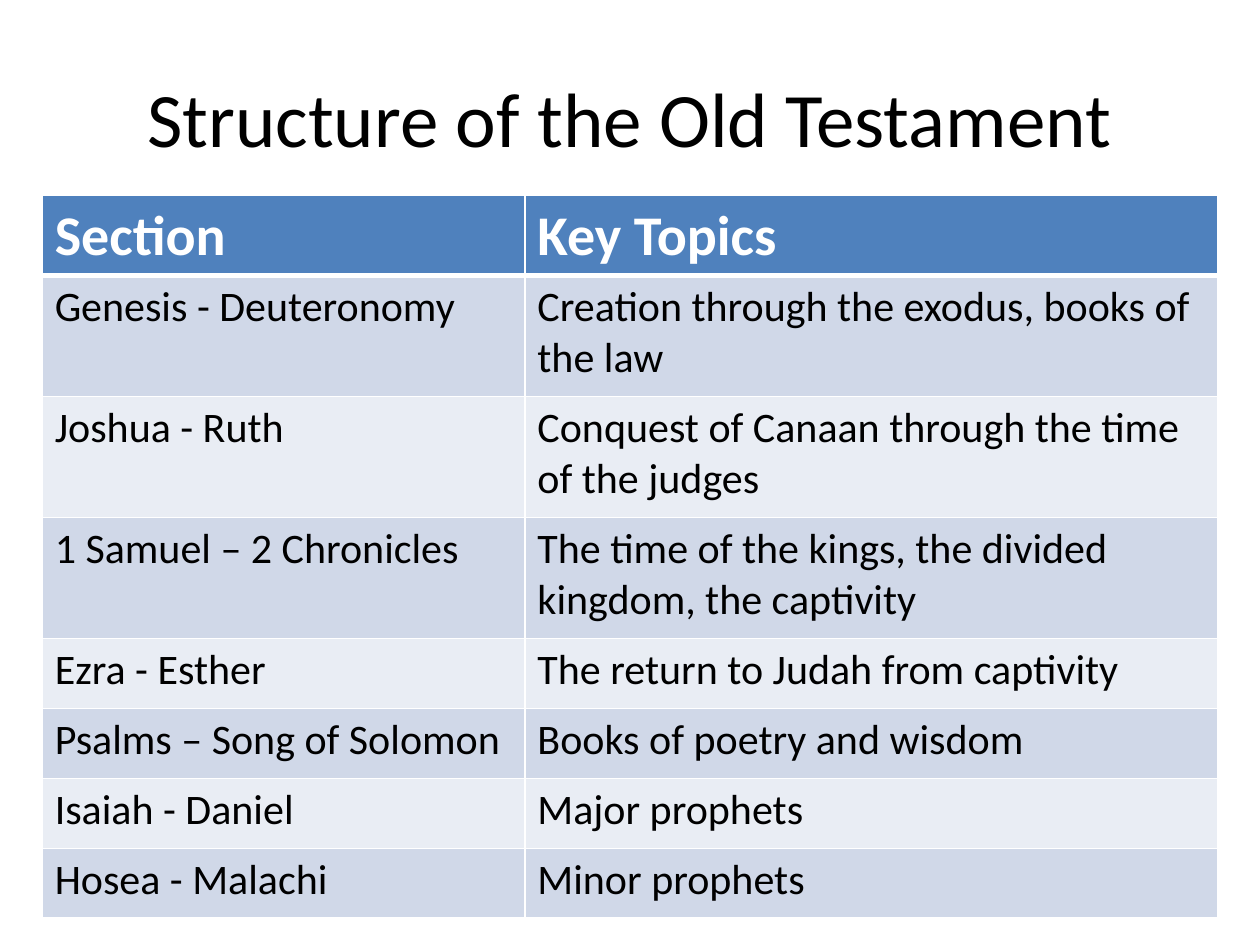
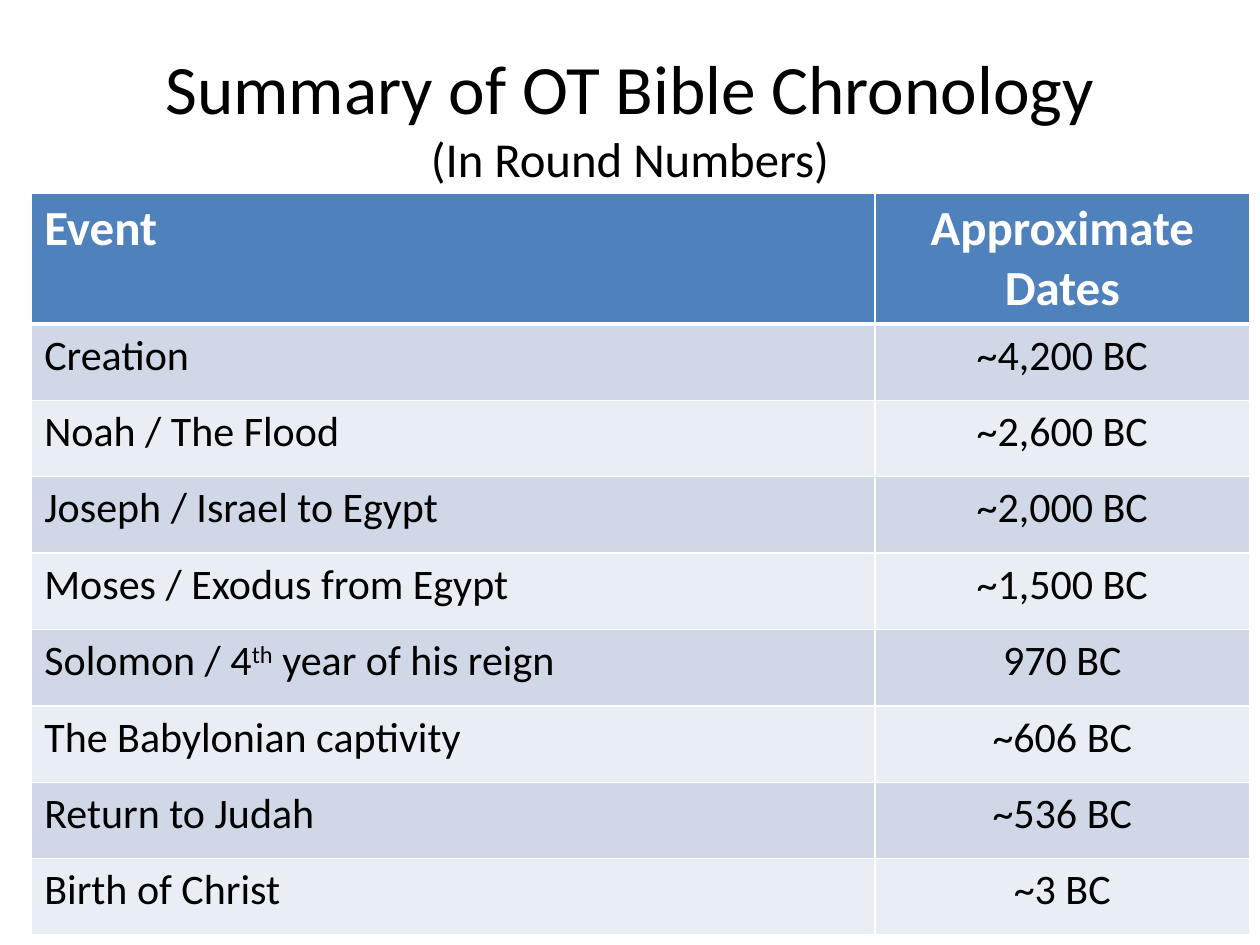
from dataclasses import dataclass

from lxml import etree
from pptx import Presentation
from pptx.dml.color import RGBColor
from pptx.enum.text import MSO_ANCHOR, PP_ALIGN
from pptx.oxml.ns import qn
from pptx.util import Cm, Pt

CENTER = PP_ALIGN.CENTER
LEFT = PP_ALIGN.LEFT
MIDDLE = MSO_ANCHOR.MIDDLE

FONT = "Calibri"
BLACK = "000000"
WHITE = "FFFFFF"
HEADER_BLUE = "4F81BD"
BAND_FILLS = ("D0D8E8", "E9EDF4")
BODY_SIZE = 24
RULE_WIDTH = 1
HEADER_RULE_WIDTH = 3
SUPERSCRIPT_MARK = "^"


@dataclass(frozen=True)
class TitleLine:
    text: str
    size: float


@dataclass(frozen=True)
class Grid:
    left: float
    top: float
    columns: tuple[float, ...]
    row_heights: tuple[float, ...]
    alignments: tuple[PP_ALIGN, ...]
    header_size: float
    rows: tuple[tuple[str, ...], ...]


@dataclass(frozen=True)
class Page:
    title: tuple[TitleLine, ...]
    grid: Grid


STRUCTURE = Page(
    title=(TitleLine("Structure of the Old Testament", 44),),
    grid=Grid(
        left=0.85,
        top=3.94,
        columns=(9.73, 13.97),
        row_heights=(1.6,) + (2.44,) * 3 + (1.41,) * 4,
        alignments=(LEFT, LEFT),
        header_size=32,
        rows=(
            ("Section", "Key Topics"),
            ("Genesis - Deuteronomy", "Creation through the exodus, books of the law"),
            ("Joshua - Ruth", "Conquest of Canaan through the time of the judges"),
            ("1 Samuel – 2 Chronicles",
             "The time of the kings, the divided kingdom, the captivity"),
            ("Ezra - Esther", "The return to Judah from captivity"),
            ("Psalms – Song of Solomon", "Books of poetry and wisdom"),
            ("Isaiah - Daniel", "Major prophets"),
            ("Hosea - Malachi", "Minor prophets"),
        ),
    ),
)

CHRONOLOGY = Page(
    title=(
        TitleLine("Summary of OT Bible Chronology", 39.6),
        TitleLine("(In Round Numbers)", 27.9),
    ),
    grid=Grid(
        left=0.64,
        top=3.89,
        columns=(17, 7.55),
        row_heights=(2.64,) + (1.54,) * 8,
        alignments=(LEFT, CENTER),
        header_size=28,
        rows=(
            ("Event", "Approximate Dates"),
            ("Creation", "~4,200 BC"),
            ("Noah / The Flood", "~2,600 BC"),
            ("Joseph / Israel to Egypt", "~2,000 BC"),
            ("Moses / Exodus from Egypt", "~1,500 BC"),
            ("Solomon / 4^th^ year of his reign", "970 BC"),
            ("The Babylonian captivity", "~606 BC"),
            ("Return to Judah", "~536 BC"),
            ("Birth of Christ", "~3 BC"),
        ),
    ),
)


def rgb(value: str) -> RGBColor:
    return RGBColor.from_string(value)


def style_run(run, size: float, color: str, bold: bool = False) -> None:
    run.font.name = FONT
    run.font.size = Pt(size)
    run.font.bold = bold
    run.font.color.rgb = rgb(color)


def add_title(slide, lines: tuple[TitleLine, ...]) -> None:
    title = slide.shapes.add_textbox(Cm(1.27), Cm(0.76), Cm(22.86), Cm(3.18))
    frame = title.text_frame
    frame.word_wrap = True
    frame.vertical_anchor = MIDDLE
    paragraph = frame.paragraphs[0]
    paragraph.text = "\v".join(line.text for line in lines)
    paragraph.alignment = CENTER
    for run, line in zip(paragraph.runs, lines):
        style_run(run, line.size, BLACK)


def add_borders(cell, top: float, bottom: float) -> None:
    properties = cell._tc.get_or_add_tcPr()
    widths = {"lnL": RULE_WIDTH, "lnR": RULE_WIDTH, "lnT": top, "lnB": bottom}
    for side, width in widths.items():
        rule = etree.SubElement(properties, qn(f"a:{side}"), w=str(Pt(width)))
        fill = etree.SubElement(rule, qn("a:solidFill"))
        etree.SubElement(fill, qn("a:srgbClr"), val=WHITE)


def write_cell(cell, text: str, alignment: PP_ALIGN, size: float,
               color: str, bold: bool) -> None:
    paragraph = cell.text_frame.paragraphs[0]
    parts = text.split(SUPERSCRIPT_MARK)
    paragraph.text = parts[0]
    for part in parts[1:]:
        paragraph.add_run().text = part
    paragraph.alignment = alignment
    for index, run in enumerate(paragraph.runs):
        style_run(run, size, color, bold)
        if index % 2:
            run._r.get_or_add_rPr().set("baseline", "30000")


def add_grid(slide, grid: Grid) -> None:
    table = slide.shapes.add_table(
        len(grid.rows), len(grid.columns), Cm(grid.left), Cm(grid.top),
        Cm(sum(grid.columns)), Cm(sum(grid.row_heights)),
    ).table
    for column, width in zip(table.columns, grid.columns):
        column.width = Cm(width)
    for row_index, (row, height) in enumerate(zip(grid.rows, grid.row_heights)):
        table.rows[row_index].height = Cm(height)
        header = row_index == 0
        background = HEADER_BLUE if header else BAND_FILLS[(row_index - 1) % 2]
        size = grid.header_size if header else BODY_SIZE
        color = WHITE if header else BLACK
        top = HEADER_RULE_WIDTH if row_index == 1 else RULE_WIDTH
        bottom = HEADER_RULE_WIDTH if header else RULE_WIDTH
        for column_index, text in enumerate(row):
            cell = table.cell(row_index, column_index)
            add_borders(cell, top, bottom)
            cell.fill.solid()
            cell.fill.fore_color.rgb = rgb(background)
            write_cell(cell, text, grid.alignments[column_index], size, color, header)


def main() -> None:
    deck = Presentation()
    deck.slide_width = Cm(25.4)
    deck.slide_height = Cm(19.05)
    blank = deck.slide_layouts[6]
    for page in (STRUCTURE, CHRONOLOGY):
        slide = deck.slides.add_slide(blank)
        add_title(slide, page.title)
        add_grid(slide, page.grid)
    deck.save("out.pptx")


if __name__ == "__main__":
    main()
